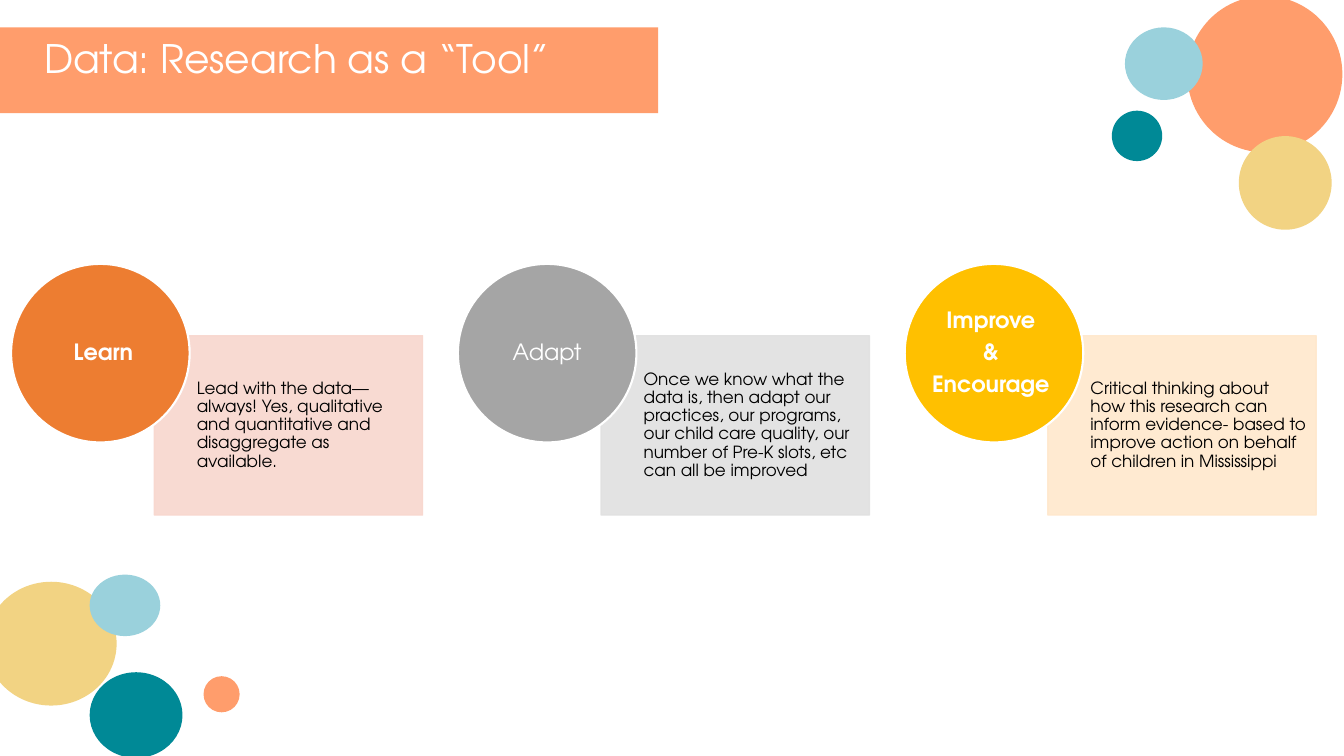
from lxml import etree
from pptx import Presentation
from pptx import util as u
from pptx.dml.color import RGBColor
from pptx.enum import shapes, text
from pptx.oxml.ns import qn

FONT = "TeX Gyre Adventor"
PEACH, SAND, SKY, TEAL = "FF9D6C", "F2D383", "9AD1DC", "008996"
TITLE = "Data: Research as a “Tool”"
# left, top, width, height in cm, colour
DOTS = [
    (29.92, -0.1, 3.91, 3.94, PEACH),
    (-0.36, 14.66, 3.3, 3.12, SAND),
    (31.22, 3.43, 2.34, 2.36, SAND),
    (28.35, 0.69, 1.96, 1.83, SKY),
    (2.26, 14.48, 1.78, 1.55, SKY),
    (2.26, 16.94, 2.34, 2.16, TEAL),
    (5.13, 17.04, 0.91, 0.91, PEACH),
    (28.02, 2.79, 1.27, 1.27, TEAL),
]
# label lines, bold, disc colour, panel colour, body
CARDS = [
    ([" Learn"], True, "ED7D31", "F8D7CE",
     "Lead with the data—always! Yes, qualitative and quantitative "
     "and disaggregate as available."),
    (["Adapt"], False, "A5A5A5", "E1E1E1",
     "Once we know what the data is, then adapt our practices, our programs, "
     "our child care quality, our number of Pre-K slots, etc can all be improved"),
    (["Improve ", "& ", "Encourage "], True, "FFC000", "FFE8CC",
     "Critical thinking about how this research can inform evidence- based "
     "to improve action on behalf of children in Mississippi"),
]
LEFT, PITCH = 0.28, 11.26
DISC_TOP, DISC = 6.65, 4.5
PANEL_DX, PANEL_TOP, PANEL_W, PANEL_H = 3.61, 8.46, 6.76, 4.52


def color(code):
    return RGBColor.from_string(code)


def fade(fill, pct):
    """Set the opacity of a solid fill element in percent."""
    rgb = fill.find(qn("a:srgbClr"))
    etree.SubElement(rgb, qn("a:alpha")).set("val", str(pct * 1000))


def draw(kind, x, y, w, h, fill, line=None, width=1, alpha=None):
    shape = slide.shapes.add_shape(kind, u.Cm(x), u.Cm(y), u.Cm(w), u.Cm(h))
    shape.shadow.inherit = False
    shape.fill.solid()
    shape.fill.fore_color.rgb = color(fill)
    if line:
        shape.line.color.rgb = color(line)
        shape.line.width = u.Pt(width)
    else:
        shape.line.fill.background()
    if alpha:
        for solid in shape._element.spPr.iter(qn("a:solidFill")):
            fade(solid, alpha)
    return shape


def write(shape, lines, size, ink="FFFFFF", bold=False, after=0,
          align=text.PP_ALIGN.LEFT, anchor=text.MSO_ANCHOR.MIDDLE,
          inset=(0, 0, 0, 0)):
    frame = shape.text_frame
    frame.word_wrap = True
    frame.vertical_anchor = anchor
    (frame.margin_left, frame.margin_top,
     frame.margin_right, frame.margin_bottom) = map(u.Cm, inset)
    for i, line in enumerate(lines):
        para = frame.add_paragraph() if i else frame.paragraphs[0]
        para.alignment = align
        para.line_spacing = 0.9
        para.space_after = u.Pt(after)
        run = para.add_run()
        run.text = line
        run.font.name = FONT
        run.font.size = u.Pt(size)
        run.font.bold = bold
        run.font.color.rgb = color(ink)


deck = Presentation()
deck.slide_width, deck.slide_height = u.Cm(33.87), u.Cm(19.05)
slide = deck.slides.add_slide(deck.slide_layouts[6])
kinds = shapes.MSO_SHAPE

for x, y, w, h, fill in DOTS:
    draw(kinds.FLOWCHART_CONNECTOR, x, y, w, h, fill)

draw(kinds.RECTANGLE, 0, 0.69, 16.59, 2.16, PEACH)
title = slide.shapes.add_textbox(u.Cm(0.86), u.Cm(0.86), u.Cm(15.47), u.Cm(1.52))
write(title, [TITLE], 28, anchor=text.MSO_ANCHOR.TOP,
      inset=(0.25, 0.13, 0.25, 0.13))

for i, (label, bold, fill, pale, body) in enumerate(CARDS):
    x = LEFT + i * PITCH
    panel = draw(kinds.RECTANGLE, x + PANEL_DX, PANEL_TOP, PANEL_W, PANEL_H,
                 pale, line=pale, alpha=90)
    write(panel, [body], 12, ink="000000", after=4.2,
          inset=(1.07, 0.23, 0.23, 0.23))
    disc = draw(kinds.OVAL, x, DISC_TOP, DISC, DISC, fill,
                line="FFFFFF", width=1.5)
    write(disc, label, 16, bold=bold, after=5.6, align=text.PP_ALIGN.CENTER)

deck.save("out.pptx")
